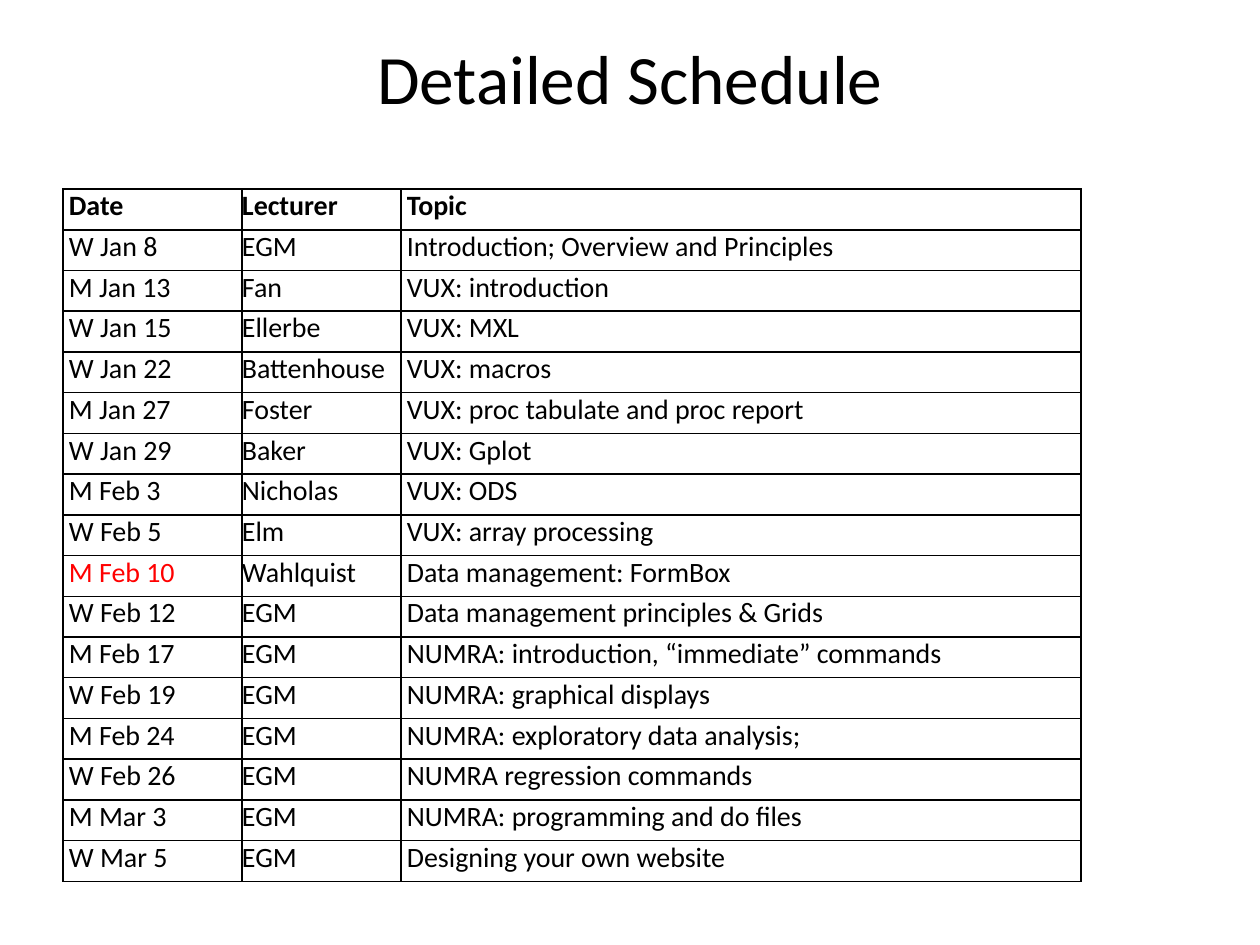
from lxml.etree import SubElement
from pptx import Presentation
from pptx.dml.color import RGBColor
from pptx.enum.text import MSO_ANCHOR, PP_ALIGN
from pptx.oxml.ns import qn
from pptx.util import Pt

EMU_PER_PX = 914400 / 126
FONT = "Calibri"
BLACK = RGBColor(0x00, 0x00, 0x00)
RED = RGBColor(0xFF, 0x00, 0x00)

HEADER = ("Date", "Lecturer", "Topic")
LECTURES = [
    ("W Jan 8", "EGM", "Introduction; Overview and Principles"),
    ("M Jan 13", "Fan", "VUX: introduction"),
    ("W Jan 15", "Ellerbe", "VUX: MXL"),
    ("W Jan 22", "Battenhouse", "VUX: macros"),
    ("M Jan 27", "Foster", "VUX: proc tabulate and proc report"),
    ("W Jan 29", "Baker", "VUX: Gplot"),
    ("M Feb 3", "Nicholas", "VUX: ODS"),
    ("W Feb 5", "Elm", "VUX: array processing"),
    ("M Feb 10", "Wahlquist", "Data management: FormBox"),
    ("W Feb 12", "EGM", "Data management principles & Grids"),
    ("M Feb 17", "EGM", "NUMRA: introduction, “immediate” commands"),
    ("W Feb 19", "EGM", "NUMRA: graphical displays"),
    ("M Feb 24", "EGM", "NUMRA: exploratory data analysis;"),
    ("W Feb 26", "EGM", "NUMRA regression commands"),
    ("M Mar 3", "EGM", "NUMRA: programming and do files"),
    ("W Mar 5", "EGM", "Designing your own website"),
]
HIGHLIGHTED_DATE = "M Feb 10"
COLUMN_WIDTHS = (179, 159, 680)
COLUMN_INSETS = (6, 0, 6)


def px(length):
    return round(length * EMU_PER_PX)


def write_text(frame, text, size=16, color=BLACK, bold=False,
               align=PP_ALIGN.LEFT, anchor=MSO_ANCHOR.TOP):
    frame.word_wrap = True
    frame.vertical_anchor = anchor
    para = frame.paragraphs[0]
    para.alignment = align
    span = para.add_run()
    span.text = text
    span.font.name = FONT
    span.font.size = Pt(size)
    span.font.bold = bold
    span.font.color.rgb = color


def draw_border(cell, side, width):
    line = SubElement(cell._tc.get_or_add_tcPr(), qn(f"a:ln{side}"), w=str(Pt(width)))
    fill = SubElement(line, qn("a:solidFill"))
    SubElement(fill, qn("a:srgbClr"), val=str(BLACK))


class SlideBuilder:
    def __init__(self, slide):
        self.slide = slide

    def title(self, text, left, top, width, height):
        box = self.slide.shapes.add_textbox(px(left), px(top), px(width), px(height))
        write_text(box.text_frame, text, size=39.6, align=PP_ALIGN.CENTER,
                   anchor=MSO_ANCHOR.MIDDLE)

    def schedule(self, rows, left, top, height):
        table = self.slide.shapes.add_table(
            len(rows), len(COLUMN_WIDTHS), px(left), px(top),
            px(sum(COLUMN_WIDTHS)), px(height)).table
        table.horz_banding = False
        for column, width in zip(table.columns, COLUMN_WIDTHS):
            column.width = px(width)
        for row_index, row in enumerate(rows):
            for column_index, text in enumerate(row):
                self.cell(table.cell(row_index, column_index), text,
                          row_index, COLUMN_INSETS[column_index])

    def cell(self, cell, text, row_index, inset):
        cell.margin_left = cell.margin_right = px(inset)
        cell.margin_top = cell.margin_bottom = 0
        # The rule under the header is heavier than the others
        draw_border(cell, "L", 1)
        draw_border(cell, "R", 1)
        draw_border(cell, "T", 1.5 if row_index == 1 else 1)
        draw_border(cell, "B", 1.5 if row_index == 0 else 1)
        cell.fill.background()
        write_text(cell.text_frame, text, bold=row_index == 0,
                   color=RED if text == HIGHLIGHTED_DATE else BLACK)


def main():
    deck = Presentation()
    deck.slide_width, deck.slide_height = px(1260), px(945)
    page = SlideBuilder(deck.slides.add_slide(deck.slide_layouts[6]))

    # Heading
    page.title("Detailed Schedule", 63, 38, 1134, 78)

    # Lecture table
    page.schedule([HEADER, *LECTURES], 63, 189, 693)

    deck.save("out.pptx")


if __name__ == "__main__":
    main()
